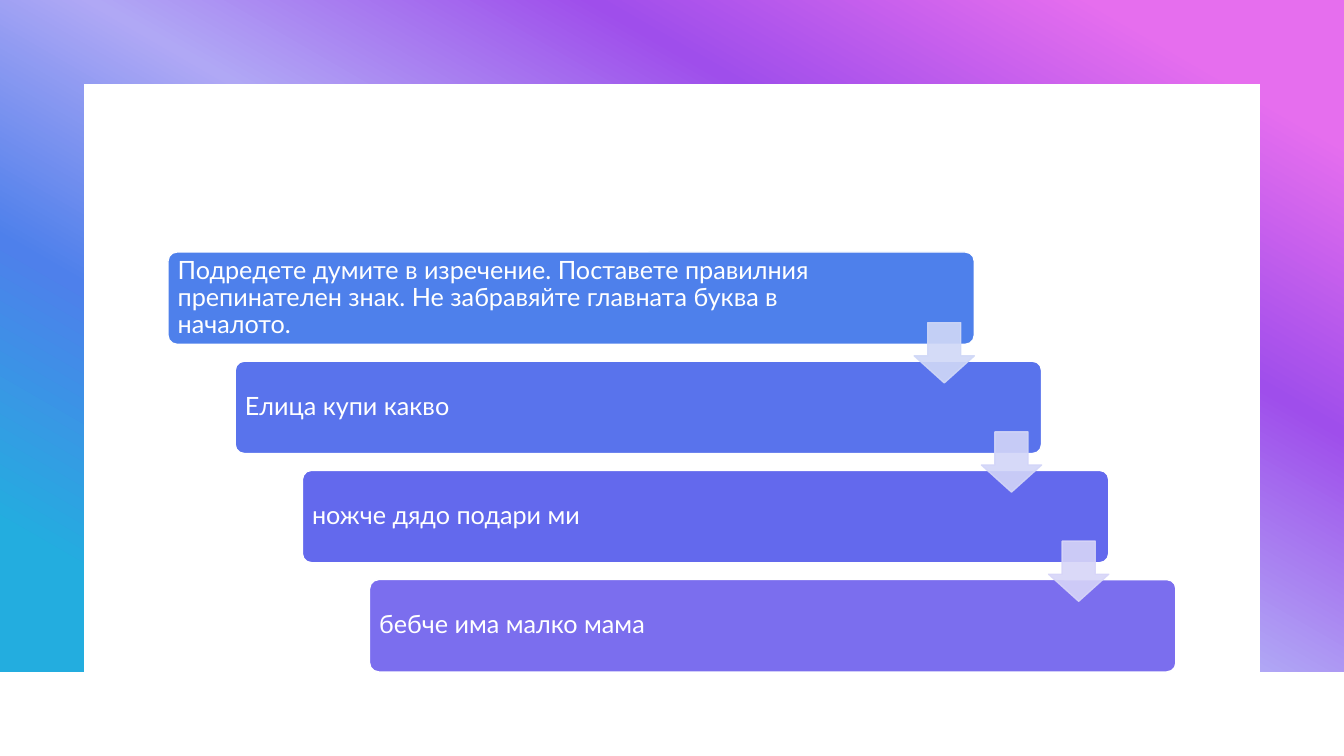
from lxml.etree import SubElement
from pptx import Presentation
from pptx.dml.color import RGBColor
from pptx.enum.shapes import MSO_SHAPE
from pptx.enum.text import MSO_ANCHOR, PP_ALIGN
from pptx.oxml.ns import qn
from pptx.util import Pt

WHITE = RGBColor(0xFF, 0xFF, 0xFF)
GRADIENT = [
    (10, RGBColor(0xE6, 0x6E, 0xEE)),
    (30, RGBColor(0x9F, 0x4E, 0xEB)),
    (50, RGBColor(0xB0, 0xA8, 0xF5)),
    (70, RGBColor(0x4E, 0x80, 0xEB)),
    (90, RGBColor(0x23, 0xAD, 0xDF)),
]
STEPS = [
    ("Подредете думите в изречение. Поставете правилния препинателен знак. "
     "Не забравяйте главната буква в началото.", RGBColor(0x4E, 0x80, 0xEB)),
    ("Елица купи какво", RGBColor(0x59, 0x73, 0xEC)),
    ("ножче дядо подари ми", RGBColor(0x63, 0x69, 0xED)),
    ("бебче има малко мама", RGBColor(0x7B, 0x6E, 0xEE)),
]
ARROW_COLORS = [
    RGBColor(0xD0, 0xD8, 0xF7),
    RGBColor(0xD2, 0xD5, 0xF8),
    RGBColor(0xD7, 0xD5, 0xF8),
]
LEFT, TOP, WIDTH, HEIGHT = 120, 180, 576, 66
STEP_X, STEP_Y = 48, 78
ARROW = 43

prs = Presentation()
prs.slide_width, prs.slide_height = Pt(960), Pt(540)
s = prs.slides.add_slide(prs.slide_layouts[6])


def add_shape(kind, x, y, w, h, color, line=None):
    sp = s.shapes.add_shape(kind, Pt(x), Pt(y), Pt(w), Pt(h))
    sp.shadow.inherit = False
    sp.fill.solid()
    sp.fill.fore_color.rgb = color
    if line is None:
        sp.line.fill.background()
    else:
        sp.line.color.rgb = line
        sp.line.width = Pt(1)
    return sp


# Gradient backdrop with the white panel on it
backdrop = add_shape(MSO_SHAPE.RECTANGLE, 0, 0, 960, 480, WHITE)
backdrop.fill.gradient()
backdrop.fill.gradient_angle = 240
stops = backdrop._element.spPr.find(".//" + qn("a:gsLst"))
for stop in list(stops):
    stops.remove(stop)
for pos, color in GRADIENT:
    stop = SubElement(stops, qn("a:gs"), pos=str(pos * 1000))
    SubElement(stop, qn("a:srgbClr"), val=str(color))
add_shape(MSO_SHAPE.RECTANGLE, 60, 60, 840, 420, WHITE)

# Staircase of sentences
for i, (text, color) in enumerate(STEPS):
    box = add_shape(MSO_SHAPE.ROUNDED_RECTANGLE, LEFT + i * STEP_X,
                    TOP + i * STEP_Y, WIDTH, HEIGHT, color, WHITE)
    box.adjustments[0] = 0.1
    tf = box.text_frame
    tf.word_wrap = True
    tf.vertical_anchor = MSO_ANCHOR.MIDDLE
    tf.margin_left = tf.margin_top = tf.margin_bottom = Pt(5)
    tf.margin_right = Pt(78)
    p = tf.paragraphs[0]
    p.alignment = PP_ALIGN.LEFT
    p.line_spacing = 0.9
    r = p.add_run()
    r.text = text
    r.font.name = "Lato"
    r.font.size = Pt(18)
    r.font.color.rgb = WHITE

# Arrows from each step to the next, flush with the step's right edge
for i, color in enumerate(ARROW_COLORS):
    arrow = add_shape(MSO_SHAPE.DOWN_ARROW, LEFT + WIDTH - ARROW + i * STEP_X,
                      TOP + 50.5 + i * STEP_Y, ARROW, ARROW, color, color)
    arrow.adjustments[0] = 0.55
    arrow.adjustments[1] = 0.45
    for clr in arrow._element.spPr.iter(qn("a:srgbClr")):
        SubElement(clr, qn("a:alpha"), val="90000")

prs.save("out.pptx")
